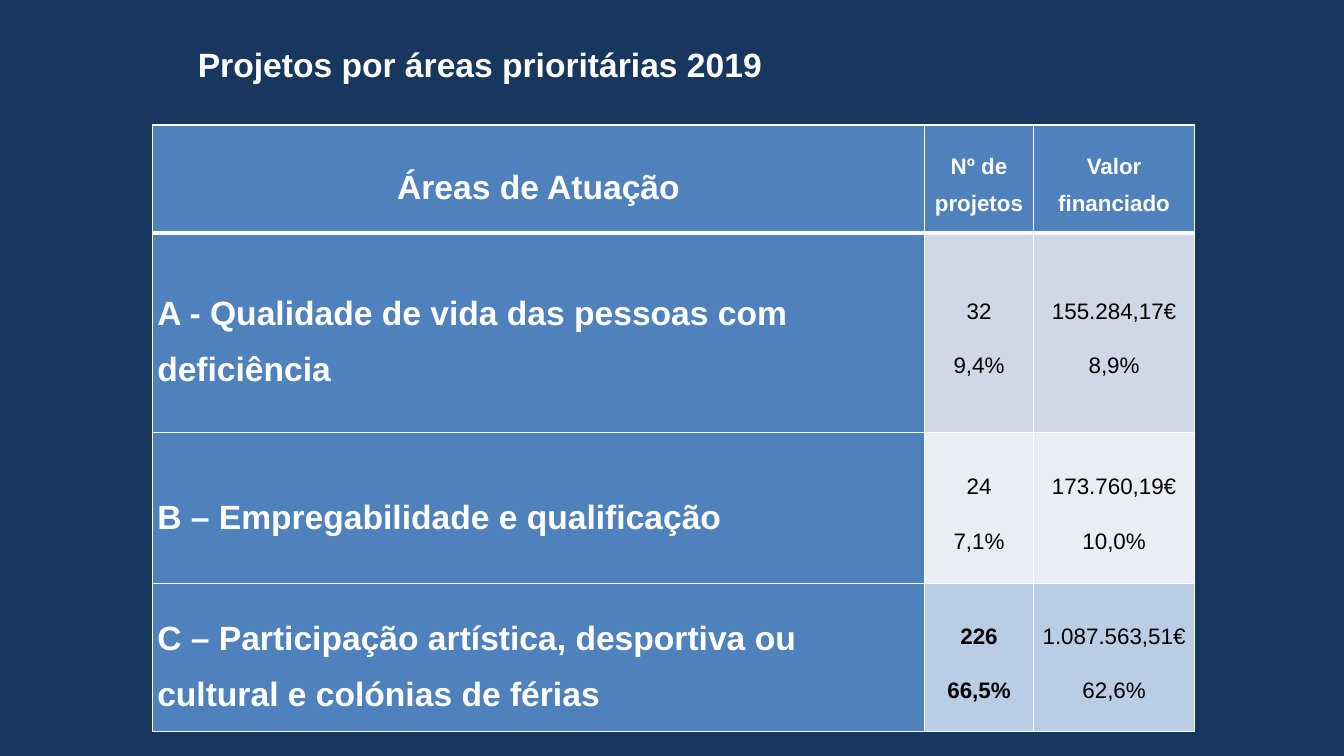
from lxml import etree
from pptx import Presentation
from pptx.dml.color import RGBColor
from pptx.enum.text import MSO_ANCHOR, PP_ALIGN
from pptx.oxml.ns import qn
from pptx.util import Inches, Pt

LEFT, CENTER = PP_ALIGN.LEFT, PP_ALIGN.CENTER
TOP, MIDDLE = MSO_ANCHOR.TOP, MSO_ANCHOR.MIDDLE

NAVY = RGBColor(0x17, 0x37, 0x5E)
BLUE = RGBColor(0x4F, 0x81, 0xBD)
BAND_A = RGBColor(0xD0, 0xD8, 0xE8)
BAND_B = RGBColor(0xE9, 0xED, 0xF4)
BAND_C = RGBColor(0xB9, 0xCD, 0xE5)
WHITE = RGBColor(0xFF, 0xFF, 0xFF)
BLACK = RGBColor(0x00, 0x00, 0x00)

COLS = [7.66, 1.08, 1.6]
ROW_HEIGHTS = [1.07, 1.98, 1.5, 1.47]
BANDS = [BLUE, BAND_A, BAND_B, BAND_C]
ROWS = [
    ["Áreas de Atuação", "Nº de projetos", "Valor financiado"],
    ["A - Qualidade de vida das pessoas com deficiência", "32\n9,4%", "155.284,17€\n8,9%"],
    ["B – Empregabilidade e qualificação", "24\n7,1%", "173.760,19€\n10,0%"],
    ["C – Participação artística, desportiva ou cultural e colónias de férias",
     "226\n66,5%", "1.087.563,51€\n62,6%"],
]
HIGHLIGHT = (3, 1)


def style(p, size, color, bold, align):
    p.alignment = align
    p.font.name = "Arial"
    p.font.size = Pt(size)
    p.font.bold = bold
    p.font.color.rgb = color


def add_border(cell, side, width):
    ln = etree.SubElement(cell._tc.get_or_add_tcPr(), qn(f"a:ln{side}"), w=str(Pt(width)))
    fill = etree.SubElement(ln, qn("a:solidFill"))
    etree.SubElement(fill, qn("a:srgbClr"), val=str(WHITE))


prs = Presentation()
prs.slide_width, prs.slide_height = Inches(13.33), Inches(7.5)
s = prs.slides.add_slide(prs.slide_layouts[6])
s.background.fill.solid()
s.background.fill.fore_color.rgb = NAVY

# Title
title = s.shapes.add_textbox(Inches(-0.26), Inches(0.37), Inches(10.04), Inches(0.81))
tf = title.text_frame
tf.word_wrap = True
tf.vertical_anchor = TOP
tf.margin_top = Inches(0.07)
tf.text = "Projetos por áreas prioritárias 2019"
style(tf.paragraphs[0], 24, WHITE, True, CENTER)

# Table
table = s.shapes.add_table(len(ROWS), len(COLS), Inches(1.51), Inches(1.24),
                           Inches(sum(COLS)), Inches(sum(ROW_HEIGHTS))).table
for column, width in zip(table.columns, COLS):
    column.width = Inches(width)

for i, (texts, height, band) in enumerate(zip(ROWS, ROW_HEIGHTS, BANDS)):
    table.rows[i].height = Inches(height)
    for j, text in enumerate(texts):
        header, area = i == 0, j == 0
        cell = table.cell(i, j)
        cell.text = text
        cell.vertical_anchor = MIDDLE
        cell.margin_left = cell.margin_right = Inches(0.05)
        cell.margin_top = cell.margin_bottom = 0
        for p in cell.text_frame.paragraphs:
            style(p, 24 if area else 16, WHITE if header or area else BLACK,
                  header or area or (i, j) == HIGHLIGHT,
                  LEFT if area and not header else CENTER)
            p.line_spacing = 1.5
            p.space_before = p.space_after = Pt(6)
        for side in "LRTB":
            under_header = (i, side) in [(0, "B"), (1, "T")]
            add_border(cell, side, 3 if under_header else 1)
        cell.fill.solid()
        cell.fill.fore_color.rgb = BLUE if area else band

prs.save("out.pptx")
